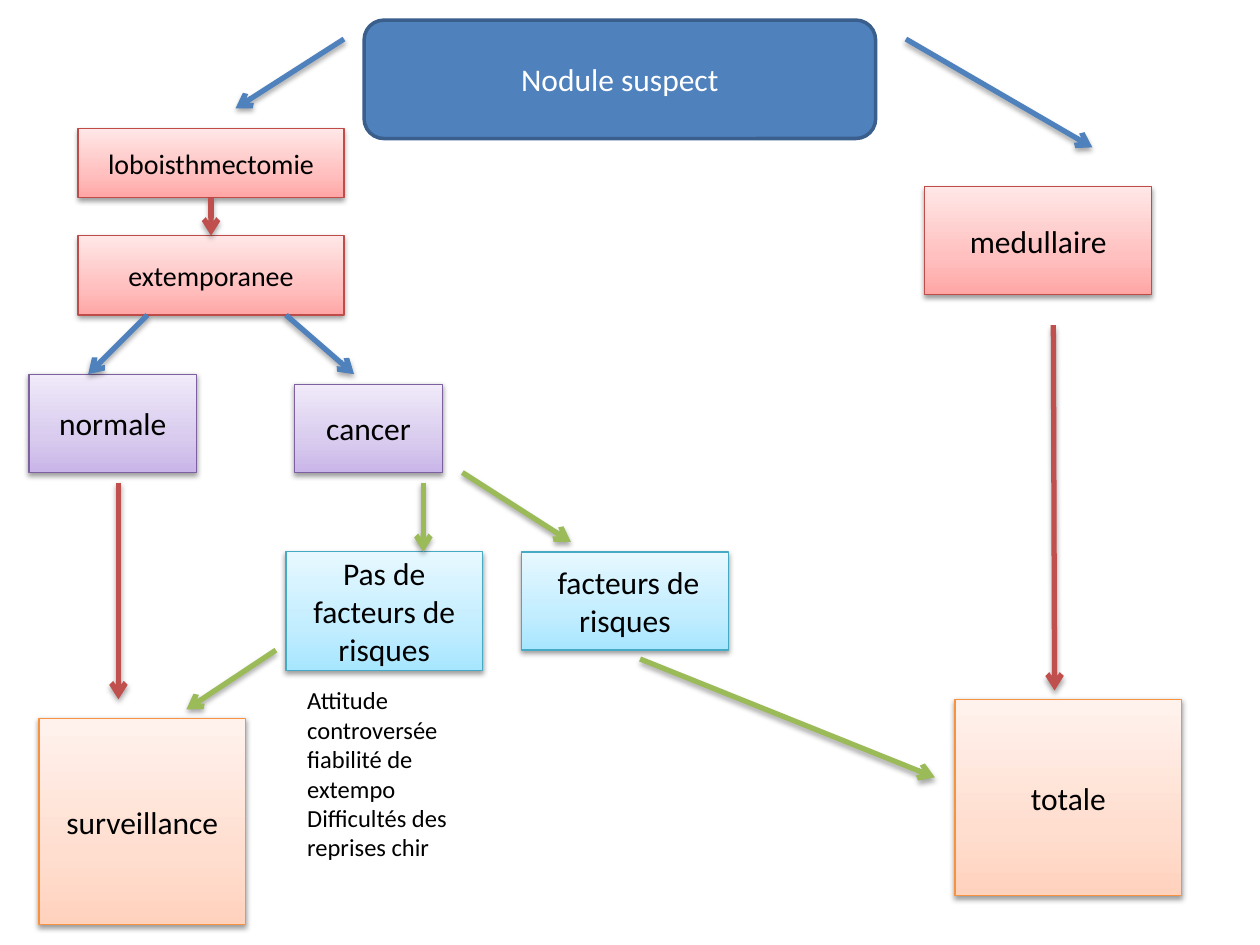
from copy import deepcopy

from lxml.etree import SubElement
from pptx import Presentation
from pptx.dml.color import RGBColor
from pptx.enum.shapes import MSO_CONNECTOR, MSO_SHAPE
from pptx.enum.text import MSO_ANCHOR, MSO_AUTO_SIZE, PP_ALIGN
from pptx.oxml.ns import qn
from pptx.util import Inches, Pt

BLACK = RGBColor(0x00, 0x00, 0x00)
WHITE = RGBColor(0xFF, 0xFF, 0xFF)
BLUE = RGBColor(0x4F, 0x81, 0xBD)
NAVY = RGBColor(0x3A, 0x5F, 0x8C)
RED = RGBColor(0xC0, 0x50, 0x4D)
GREEN = RGBColor(0x9B, 0xBB, 0x59)
ROSE = [RGBColor.from_string(c) for c in ("FFA6A5", "FFC0BF", "FFE7E7", "BF4C48")]
LILAC = [RGBColor.from_string(c) for c in ("C9B5E8", "D8CBEE", "F0EAF9", "7D60A0")]
AQUA = [RGBColor.from_string(c) for c in ("A7E6FF", "C1EDFF", "E7F8FF", "46AAC5")]
PEACH = [RGBColor.from_string(c) for c in ("FFD2BD", "FFDED0", "FFF2ED", "F69240")]


def write(frame, text, size=18, color=BLACK, align=PP_ALIGN.CENTER, anchor=MSO_ANCHOR.MIDDLE):
    frame.word_wrap = True
    frame.vertical_anchor = anchor
    frame.text = text
    for para in frame.paragraphs:
        para.alignment = align
        para.font.name = "Calibri"
        para.font.size = Pt(size)
        para.font.color.rgb = color


def shade(effect, dist, alpha):
    shadow = SubElement(effect, qn("a:outerShdw"), blurRad=str(Pt(3.1)), dist=str(Pt(dist)),
                        dir="5400000", rotWithShape="0")
    color = SubElement(shadow, qn("a:srgbClr"), val="000000")
    SubElement(color, qn("a:alpha"), val=str(alpha * 1000))


class Chart:
    """Draws the parts of a flow chart in one style on the current slide."""

    def __init__(self, slide):
        self.shapes = slide.shapes

    def title(self, text, *place):
        shape = self.shapes.add_shape(MSO_SHAPE.ROUNDED_RECTANGLE, *map(Inches, place))
        shape.shadow.inherit = False
        shape.fill.solid()
        shape.fill.fore_color.rgb = BLUE
        shape.line.color.rgb = NAVY
        shape.line.width = Pt(2)
        write(shape.text_frame, text, color=WHITE)

    def box(self, text, tones, *place, size=18):
        shape = self.shapes.add_shape(MSO_SHAPE.RECTANGLE, *map(Inches, place))
        shape.fill.gradient()
        shape.fill.gradient_angle = 90
        stops = next(shape.element.iter(qn("a:gsLst")))
        stops.insert(1, deepcopy(stops[0]))
        for stop, tone, pos in zip(shape.fill.gradient_stops, tones, (0, 0.35, 1)):
            stop.color.rgb = tone
            stop.position = pos
        shape.line.color.rgb = tones[3]
        shape.line.width = Pt(0.75)
        shape.shadow.inherit = False
        shade(next(shape.element.iter(qn("a:effectLst"))), 1.6, 38)
        write(shape.text_frame, text, size=size)
        return shape

    def arrow(self, color, *ends):
        line = self.shapes.add_connector(MSO_CONNECTOR.STRAIGHT, *map(Inches, ends))
        line.line.color.rgb = color
        line.line.width = Pt(3)
        SubElement(next(line.element.iter(qn("a:ln"))), qn("a:tailEnd"), type="arrow")
        shade(SubElement(line.element.spPr, qn("a:effectLst")), 1.8, 35)
        return line

    def note(self, text, *place):
        frame = self.shapes.add_textbox(*map(Inches, place)).text_frame
        write(frame, text, size=14, align=PP_ALIGN.LEFT, anchor=MSO_ANCHOR.TOP)
        frame.auto_size = MSO_AUTO_SIZE.SHAPE_TO_FIT_TEXT


def main():
    deck = Presentation()
    deck.slide_width, deck.slide_height = Inches(10), Inches(7.5)
    chart = Chart(deck.slides.add_slide(deck.slide_layouts[6]))

    chart.title("Nodule suspect", 2.89, 0.16, 4.06, 0.94)
    lobe = chart.box("loboisthmectomie", ROSE, 0.62, 1.02, 2.11, 0.55, size=16)
    chart.box("medullaire", ROSE, 7.34, 1.48, 1.8, 0.86)
    test = chart.box("extemporanee", ROSE, 0.62, 1.87, 2.11, 0.63, size=16)
    chart.box("normale", LILAC, 0.23, 2.97, 1.33, 0.78)
    chart.box("cancer", LILAC, 2.34, 3.05, 1.17, 0.7)
    chart.box("Pas de facteurs de risques", AQUA, 2.27, 4.38, 1.56, 0.94)
    chart.box(" facteurs de risques", AQUA, 4.14, 4.38, 1.64, 0.78)
    chart.box("surveillance", PEACH, 0.31, 5.7, 1.64, 1.64)
    chart.box("totale", PEACH, 7.58, 5.55, 1.8, 1.56)

    for color, *ends in (
        (RED, 0.94, 3.83, 0.94, 5.55),
        (BLUE, 7.19, 0.31, 8.67, 1.17),
        (BLUE, 2.73, 0.31, 1.87, 0.86),
        (BLUE, 2.27, 2.5, 2.81, 2.97),
        (BLUE, 1.17, 2.5, 0.7, 2.97),
        (RED, 8.36, 2.58, 8.37, 5.48),
        (GREEN, 3.36, 3.83, 3.36, 4.38),
        (GREEN, 3.67, 3.75, 4.53, 4.3),
        (GREEN, 5.08, 5.23, 7.42, 6.17),
        (GREEN, 2.19, 5.16, 1.48, 5.63),
    ):
        chart.arrow(color, *ends)
    link = chart.arrow(RED, 1.68, 1.57, 1.68, 1.87)
    link.begin_connect(lobe, 2)
    link.end_connect(test, 0)

    chart.note("Attitude controversée fiabilité de extempo\nDifficultés des reprises chir",
               2.34, 5.39, 1.56, 1.51)
    deck.save("out.pptx")


if __name__ == "__main__":
    main()
